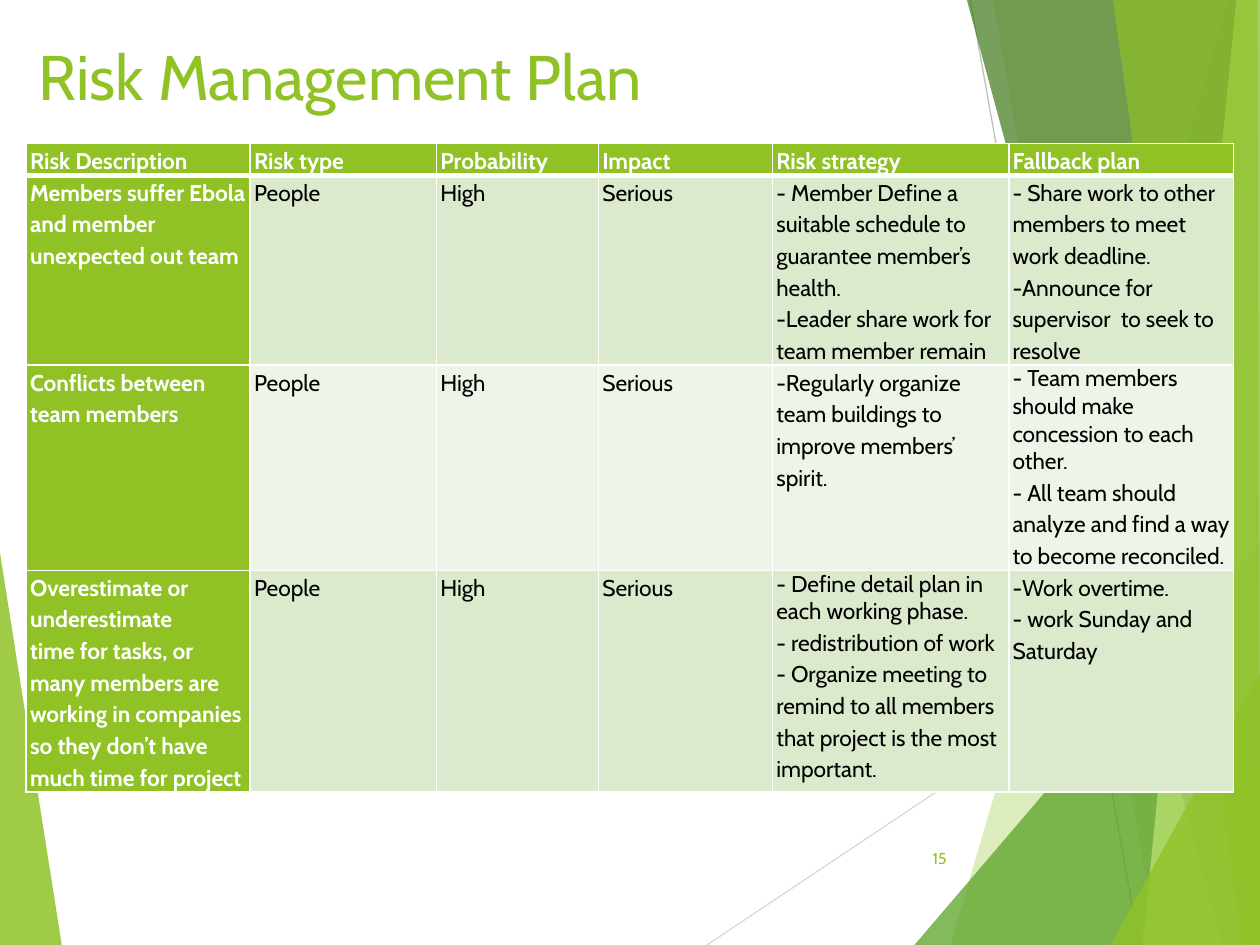
"""Build the Risk Management Plan slide with its table and green facets."""
from lxml import etree
from pptx import Presentation
from pptx.dml.color import RGBColor as Rgb
from pptx.enum.shapes import MSO_CONNECTOR as Link
from pptx.enum.text import MSO_ANCHOR as Anchor, MSO_AUTO_SIZE as Fit, PP_ALIGN as Align
from pptx.oxml import parse_xml
from pptx.oxml.ns import nsdecls, qn
from pptx.util import Pt

HUES = {"lime": "90C226", "green": "54A021", "dark": "3F7819", "pale": "C0E474",
        "white": "FFFFFF", "black": "000000", "band": "DBE9CD", "light": "EEF4E8",
        "grey": "D9D9D9", "steel": "BFBFBF"}


def write(para, text, size, hue, bold=False):
    run = para.add_run()
    run.text = text
    run.font.name = "Cabin"
    run.font.size = Pt(size)
    run.font.bold = bold
    run.font.color.rgb = Rgb.from_string(HUES[hue])


def edge(cell, side, width):
    cell._tc.get_or_add_tcPr().append(parse_xml(
        f'<a:{side} {nsdecls("a")} w="{Pt(width)}"><a:solidFill>'
        f'<a:srgbClr val="{HUES["white"]}"/></a:solidFill></a:{side}>'))


deck = Presentation()
deck.slide_width, deck.slide_height = Pt(720), Pt(540)
slide = deck.slides.add_slide(deck.slide_layouts[5])
shapes = slide.shapes
title = shapes.title

lines = [((404, 540), (720, 329), "grey"), ((554.5, 0), (651, 540), "steel")]
for start, end, hue in lines:
    line = shapes.add_connector(Link.STRAIGHT, *map(Pt, start + end))
    line.line.color.rgb = Rgb.from_string(HUES[hue])
    line.line.width = Pt(0.75)
    etree.SubElement(line._element.spPr, qn("a:effectLst"))

facets = [
    ("lime", 85, [(0, 316), (35.3, 540), (0, 540)]),
    ("lime", 30, [(702, 0), (543, 540), (720, 540), (720, 0)]),
    ("lime", 20, [(567.5, 0), (661.5, 540), (720, 540), (720, 0)]),
    ("green", 72, [(522.5, 540), (720, 309), (720, 540)]),
    ("dark", 70, [(552.5, 0), (698.5, 540), (720, 540), (720, 0)]),
    ("pale", 70, [(706.5, 0), (653, 540), (720, 540), (720, 0)]),
    ("lime", 65, [(636, 0), (710, 540), (720, 540), (718.5, 0)]),
    ("lime", 80, [(634.5, 540), (720, 385), (720, 540)]),
]
for hue, alpha, spots in facets:
    spots = [(Pt(x), Pt(y)) for x, y in spots]
    path = shapes.build_freeform(*spots[0])
    path.add_line_segments(spots[1:])
    facet = path.convert_to_shape()
    facet.shadow.inherit = False
    facet.line.fill.background()
    facet.fill.solid()
    facet.fill.fore_color.rgb = Rgb.from_string(HUES[hue])
    tint = facet._element.spPr.find(f".//{qn('a:srgbClr')}")
    etree.SubElement(tint, qn("a:alpha"), val=str(alpha * 1000))

shapes._spTree.append(title._element)
title.left, title.top, title.width, title.height = Pt(15), Pt(18), Pt(690), Pt(104)
frame = title.text_frame
frame.auto_size = Fit.NONE
frame.vertical_anchor = Anchor.TOP
frame.paragraphs[0].alignment = Align.LEFT
write(frame.paragraphs[0], "Risk Management Plan", 36, "lime")

rows = [
    ["Risk Description", "Risk type", "Probability", "Impact", "Risk strategy",
     "Fallback plan"],
    ["Members suffer Ebola and member unexpected out team", "People", "High", "Serious",
     "- Member Define a suitable schedule to guarantee member’s health.\n"
     "-Leader share work for team member remain",
     "- Share work to other members to meet work deadline.\n"
     "-Announce for supervisor  to seek to resolve"],
    ["Conflicts between team members", "People", "High", "Serious",
     "-Regularly organize team buildings to improve members’ spirit.",
     "- Team members should make concession to each other.\n"
     "- All team should analyze and find a way to become reconciled."],
    ["Overestimate or underestimate\ntime for tasks, or\n"
     "many members are working in companies so they don’t have much time for project",
     "People", "High", "Serious",
     "- Define detail plan in each working phase.\n- redistribution of work\n"
     "- Organize meeting to remind to all members that project is the most important.",
     "-Work overtime.\n- work Sunday and Saturday"],
]
widths = [128, 106.5, 92.5, 99.5, 135, 128.5]
heights = [18, 98.5, 83.5, 116]
tight = {(2, 5), (3, 4)}
grid = shapes.add_table(4, 6, Pt(15), Pt(82), Pt(sum(widths)), Pt(sum(heights))).table
for col, width in zip(grid.columns, widths):
    col.width = Pt(width)
for r, row in enumerate(rows):
    grid.rows[r].height = Pt(heights[r])
    for c, text in enumerate(row):
        cell = grid.cell(r, c)
        head = r == 0 or c == 0
        edges = {"lnL": 1, "lnR": 1, "lnT": 3 if r == 1 else 1, "lnB": 3 if r == 0 else 1}
        for side, width in edges.items():
            edge(cell, side, width)
        cell.fill.solid()
        fill = "lime" if head else "band" if r % 2 else "light"
        cell.fill.fore_color.rgb = Rgb.from_string(HUES[fill])
        cell.margin_left = cell.margin_right = Pt(2.2)
        cell.margin_top = cell.margin_bottom = 0
        for n, part in enumerate(text.split("\n")):
            body = cell.text_frame
            para = body.add_paragraph() if n else body.paragraphs[0]
            para.line_spacing = 1.0 if n == 0 and (r, c) in tight else 1.15
            write(para, part, 13, "white" if head else "black", head)

page = shapes.add_textbox(Pt(507.5), Pt(476), Pt(40.5), Pt(28.75)).text_frame
page.word_wrap = True
page.vertical_anchor = Anchor.MIDDLE
page.paragraphs[0].alignment = Align.RIGHT
write(page.paragraphs[0], "15", 9, "lime")

deck.save("out.pptx")
